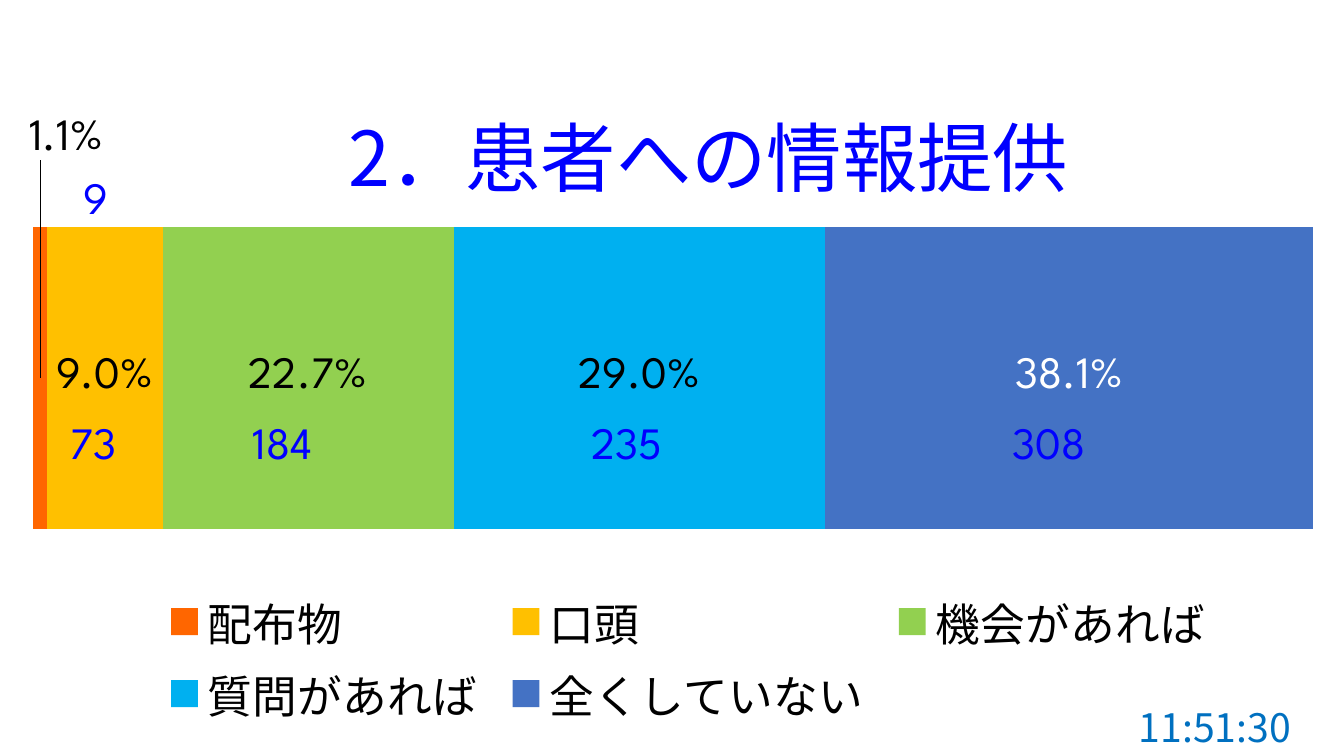
import pptx
import pptx.chart.data
import pptx.dml.color
import pptx.enum.chart
import pptx.enum.shapes
import pptx.enum.text
import pptx.oxml
import pptx.oxml.ns
import pptx.util
from pptx.util import Cm

COLOURS = {
    "title": "0000FF",
    "count": "0000FF",
    "time": "0070C0",
    "black": "000000",
    "white": "FFFFFF",
}
NUMBER_FONT = "League Spartan"
JAPANESE_FONT = "Noto Sans CJK JP"
PERCENT = "0.0%"

# name, share, fill, label colour
ANSWERS = [
    ("配布物", 0.011, "FF6600", "black"),
    ("口頭", 0.09, "FFC000", "black"),
    ("機会があれば", 0.227, "92D050", "black"),
    ("質問があれば", 0.29, "00B0F0", "black"),
    ("全くしていない", 0.381, "4472C4", "white"),
]

# text, left, top, width in centimetres
COUNTS = [
    ("73", 1.52, 10.31, 1.85),
    ("184", 6.12, 10.31, 2.54),
    ("235", 14.66, 10.31, 2.54),
    ("308", 25.27, 10.31, 2.54),
    ("9", 1.85, 4.14, 1.19),
]


def rgb(value):
    return pptx.dml.color.RGBColor.from_string(value)


def set_font(font, name, size, colour):
    font.name = name
    font.size = pptx.util.Pt(size)
    font.bold = False
    font.color.rgb = rgb(colour)


def set_layout(parent, index, **values):
    """Give a chart part a manual layout as its child number index."""
    for old in parent.findall(pptx.oxml.ns.qn("c:layout")):
        parent.remove(old)
    settings = "".join(f'<c:{tag} val="{value}"/>' for tag, value in values.items())
    layout = pptx.oxml.parse_xml(
        f'<c:layout {pptx.oxml.ns.nsdecls("c")}>'
        f"<c:manualLayout>{settings}</c:manualLayout></c:layout>"
    )
    parent.insert(index, layout)


def add_east_asian_fonts(chart):
    for latin in chart.element.xpath(f'.//a:latin[@typeface="{JAPANESE_FONT}"]'):
        latin.addnext(pptx.oxml.parse_xml(
            f'<a:ea {pptx.oxml.ns.nsdecls("a")} typeface="{JAPANESE_FONT}"/>'
        ))


def format_labels(series, colour):
    labels = series.data_labels
    labels.show_value = True
    labels.number_format = PERCENT
    labels.number_format_is_linked = False
    labels.position = pptx.enum.chart.XL_LABEL_POSITION.CENTER
    set_font(labels.font, NUMBER_FONT, 32, colour)


def raise_label(series):
    """Move the label of the narrow first segment above the bar."""
    set_font(series.points[0].data_label.font, NUMBER_FONT, 32, COLOURS["black"])
    label = series.data_labels._element.xpath("./c:dLbl")[0]
    set_layout(label, 1, x=0.02, y=-0.315)
    label.insert(2, pptx.oxml.parse_xml(
        f'<c:numFmt {pptx.oxml.ns.nsdecls("c")} formatCode="{PERCENT}" sourceLinked="0"/>'
    ))


def add_title(chart):
    chart.has_title = True
    paragraph = chart.chart_title.text_frame.paragraphs[0]
    paragraph.text = "2．患者への情報提供"
    set_font(paragraph.font, JAPANESE_FONT, 54, COLOURS["title"])
    set_font(paragraph.runs[0].font, JAPANESE_FONT, 54, COLOURS["title"])
    title = chart.element.xpath("./c:chart/c:title")[0]
    set_layout(title, 1, xMode="edge", yMode="edge", x=0.23, y=0.1)


def add_legend(chart):
    chart.has_legend = True
    legend = chart.legend
    legend.position = pptx.enum.chart.XL_LEGEND_POSITION.TOP
    legend.include_in_layout = False
    set_font(legend.font, JAPANESE_FONT, 32, COLOURS["black"])
    element = chart.element.xpath("./c:chart/c:legend")[0]
    set_layout(element, 1, xMode="edge", yMode="edge", x=0.09, y=0.77, w=0.82, h=0.2)


def add_answer_chart(slide):
    data = pptx.chart.data.CategoryChartData(number_format=PERCENT)
    data.categories = ["1"]
    for name, share, _, _ in ANSWERS:
        data.add_series(name, [share])
    chart = slide.shapes.add_chart(
        pptx.enum.chart.XL_CHART_TYPE.BAR_STACKED_100,
        Cm(0.74), Cm(0), Cm(33.12), Cm(19.05), data,
    ).chart
    set_font(chart.font, "Calibri", 10, COLOURS["black"])
    chart.category_axis.visible = False
    chart.value_axis.visible = False
    chart.value_axis.has_major_gridlines = False
    chart.value_axis.maximum_scale = 1
    chart.value_axis.tick_labels.number_format = PERCENT
    chart.value_axis.tick_labels.number_format_is_linked = False

    plot = chart.plots[0]
    plot.vary_by_categories = False
    plot.gap_width = 150
    plot.overlap = 100
    for series, (_, _, fill, label_colour) in zip(plot.series, ANSWERS):
        series.format.fill.solid()
        series.format.fill.fore_color.rgb = rgb(fill)
        format_labels(series, COLOURS[label_colour])
    raise_label(plot.series[0])

    plot_area = chart.element.xpath("./c:chart/c:plotArea")[0]
    set_layout(plot_area, 0, layoutTarget="inner", xMode="edge", yMode="edge",
               x=0, y=0, w=0.977, h=1)
    add_title(chart)
    add_legend(chart)
    add_east_asian_fonts(chart)


def write_line(shape, text, font_name, size, colour):
    frame = shape.text_frame
    frame.word_wrap = False
    frame.auto_size = pptx.enum.text.MSO_AUTO_SIZE.SHAPE_TO_FIT_TEXT
    frame.vertical_anchor = pptx.enum.text.MSO_ANCHOR.MIDDLE
    paragraph = frame.paragraphs[0]
    paragraph.text = text
    paragraph.alignment = pptx.enum.text.PP_ALIGN.LEFT
    set_font(paragraph.font, font_name, size, colour)


def add_count(slide, text, left, top, width):
    box = slide.shapes.add_textbox(Cm(left), Cm(top), Cm(width), Cm(1.63))
    write_line(box, text, NUMBER_FONT, 32, COLOURS["count"])


def add_time(slide):
    box = slide.shapes.add_shape(
        pptx.enum.shapes.MSO_SHAPE.RECTANGLE, Cm(28.45), Cm(17.6), Cm(5.51), Cm(1.45)
    )
    box.shadow.inherit = False
    box.fill.background()
    box.line.color.rgb = rgb(COLOURS["white"])
    box.line.width = pptx.util.Pt(0.75)
    write_line(box, "11:51:30", JAPANESE_FONT, 28, COLOURS["time"])


def main():
    presentation = pptx.Presentation()
    presentation.slide_width = Cm(33.87)
    presentation.slide_height = Cm(19.05)
    slide = presentation.slides.add_slide(presentation.slide_layouts.get_by_name("Blank"))
    add_answer_chart(slide)
    for count in COUNTS:
        add_count(slide, *count)
    add_time(slide)
    presentation.save("out.pptx")


if __name__ == "__main__":
    main()
